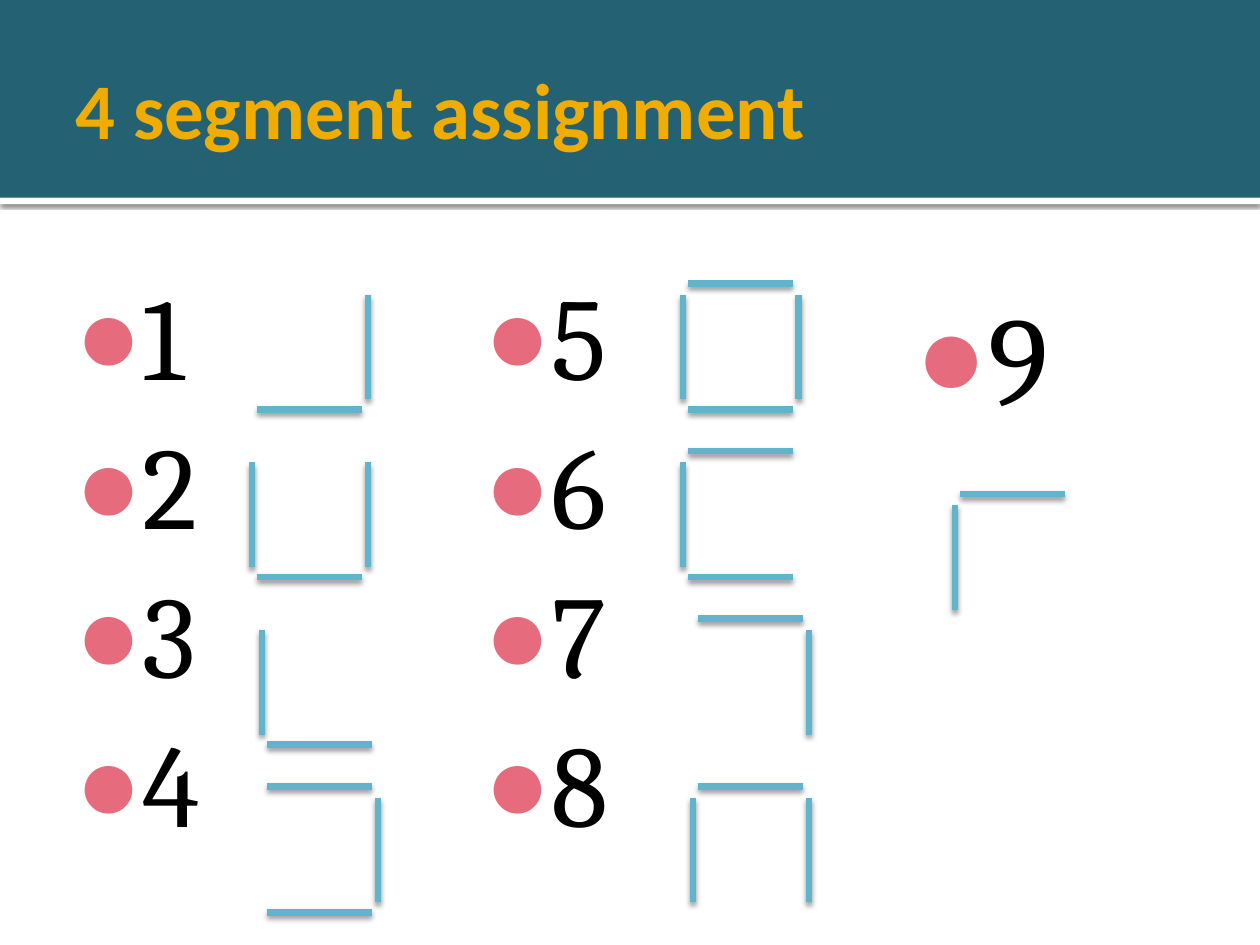
from dataclasses import dataclass

from lxml.etree import SubElement
from pptx import Presentation
from pptx.dml.color import RGBColor
from pptx.enum.shapes import MSO_CONNECTOR, MSO_SHAPE
from pptx.enum.text import MSO_ANCHOR
from pptx.oxml.ns import qn
from pptx.util import Inches, Pt

TEAL = RGBColor(0x24, 0x61, 0x72)
WHITE = RGBColor(0xFF, 0xFF, 0xFF)
BLACK = RGBColor(0x00, 0x00, 0x00)
GOLD = RGBColor(0xF0, 0xAD, 0x00)
SKY = RGBColor(0x60, 0xB5, 0xCC)
PINK = RGBColor(0xE6, 0x6C, 0x7D)

# Segment ends in inches, relative to the corner of a digit's cell
SEGMENTS = {
    "top": (0.04, 0, 0.87, 0),
    "bottom": (0.04, 1, 0.87, 1),
    "left": (0, 0.09, 0, 0.92),
    "right": (0.92, 0.09, 0.92, 0.92),
}
FIRST_ROW, ROW_STEP = 2.25, 1.33


@dataclass(frozen=True)
class Shadow:
    opacity: int  # percent
    blur: float  # points
    distance: float  # points


@dataclass(frozen=True)
class DigitList:
    digits: str
    left: float
    width: float
    size: float
    line_spacing: float


@dataclass(frozen=True)
class Glyph:
    left: float
    top: float
    segments: str


BAND_SHADOW = Shadow(60, 2.5, 0.8)
SEGMENT_SHADOW = Shadow(38, 3.1, 2)

LISTS = [
    DigitList("1234", 0.5, 3.08, 66.6, 0.9),
    DigitList("5678", 3.75, 3.08, 66.6, 0.9),
    DigitList("9", 7.17, 2.17, 72, 1.0),
]


def row(index: int) -> float:
    return FIRST_ROW + index * ROW_STEP


GLYPHS = [
    Glyph(2.0, row(0), "bottom right"),
    Glyph(2.0, row(1), "bottom right left"),
    Glyph(2.08, row(2), "bottom left"),
    Glyph(2.08, row(3), "top bottom right"),
    Glyph(5.42, row(0), "top bottom right left"),
    Glyph(5.42, row(1), "top bottom left"),
    Glyph(5.5, row(2), "top right"),
    Glyph(5.5, row(3), "top right left"),
    Glyph(7.58, 3.92, "top left"),
]


def add_shadow(effects, shadow: Shadow) -> None:
    """Put a downward black shadow into an effect list."""
    outer = SubElement(effects, qn("a:outerShdw"), blurRad=str(Pt(shadow.blur)),
                       dist=str(Pt(shadow.distance)), dir="5400000",
                       algn="ctr", rotWithShape="0")
    color = SubElement(outer, qn("a:srgbClr"), val=str(BLACK))
    SubElement(color, qn("a:alpha"), val=str(shadow.opacity * 1000))


def add_band(page, top: float, height: float, color: RGBColor):
    band = page.shapes.add_shape(MSO_SHAPE.RECTANGLE, 0, Inches(top),
                                 Inches(10), Inches(height))
    band.fill.solid()
    band.fill.fore_color.rgb = color
    band.line.fill.background()
    band.shadow.inherit = False
    return band


def add_text_box(page, left: float, top: float, width: float, height: float):
    box = page.shapes.add_textbox(Inches(left), Inches(top),
                                  Inches(width), Inches(height))
    box.text_frame.word_wrap = True
    return box.text_frame


def add_span(para, text: str, font: str, size: float, color: RGBColor):
    span = para.add_run()
    span.text = text
    span.font.name = font
    span.font.size = Pt(size)
    span.font.color.rgb = color
    return span


def add_bullet(para) -> None:
    """Give a paragraph its indent, spacing and round bullet."""
    properties = para._p.get_or_add_pPr()
    properties.set("marL", str(Inches(0.3)))
    properties.set("indent", str(Inches(-0.3)))
    before = SubElement(properties, qn("a:spcBef"))
    SubElement(before, qn("a:spcPct"), val="20000")
    color = SubElement(properties, qn("a:buClr"))
    SubElement(color, qn("a:srgbClr"), val=str(PINK))
    SubElement(properties, qn("a:buSzPct"), val="95000")
    SubElement(properties, qn("a:buFont"), typeface="Arial")
    SubElement(properties, qn("a:buChar"), char="●")


def add_digit_list(page, item: DigitList) -> None:
    frame = add_text_box(page, item.left, 2.17, item.width, 4.8)
    for index, digit in enumerate(item.digits):
        para = frame.add_paragraph() if index else frame.paragraphs[0]
        para.line_spacing = item.line_spacing
        add_bullet(para)
        add_span(para, digit, "Cambria", item.size, BLACK)


def add_glyph(page, glyph: Glyph) -> None:
    for name in glyph.segments.split():
        x1, y1, x2, y2 = SEGMENTS[name]
        segment = page.shapes.add_connector(
            MSO_CONNECTOR.STRAIGHT,
            Inches(glyph.left + x1), Inches(glyph.top + y1),
            Inches(glyph.left + x2), Inches(glyph.top + y2))
        segment.line.color.rgb = SKY
        segment.line.width = Pt(3.82)
        effects = SubElement(segment._element.spPr, qn("a:effectLst"))
        add_shadow(effects, SEGMENT_SHADOW)


def main() -> None:
    deck = Presentation()
    deck.slide_width, deck.slide_height = Inches(10), Inches(7.5)
    page = deck.slides.add_slide(deck.slide_layouts[6])

    # Header bands
    rule = add_band(page, 1.57, 0.05, WHITE)
    add_shadow(rule._element.spPr.find(qn("a:effectLst")), BAND_SHADOW)
    add_band(page, 0, 1.57, TEAL)

    # Title
    frame = add_text_box(page, 0.5, 0.17, 9, 1.37)
    frame.vertical_anchor = MSO_ANCHOR.MIDDLE
    frame.margin_right = Inches(0.05)
    title = add_span(frame.paragraphs[0], "4 segment assignment",
                     "Calibri", 45, GOLD)
    title.font.bold = True

    # Digits and their segments
    for item in LISTS:
        add_digit_list(page, item)
    for glyph in GLYPHS:
        add_glyph(page, glyph)

    deck.save("out.pptx")


if __name__ == "__main__":
    main()
